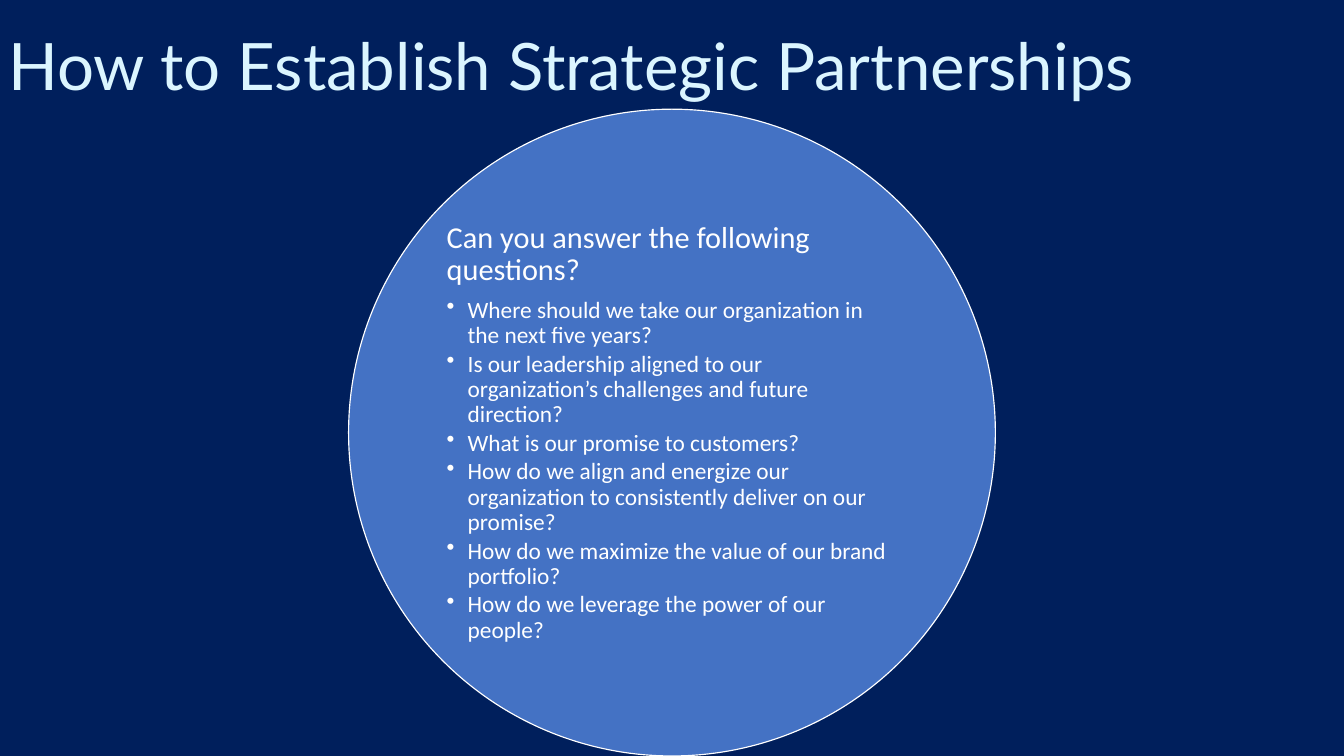
from dataclasses import dataclass
from math import sqrt

from lxml.etree import SubElement
from pptx import Presentation
from pptx.dml.color import RGBColor
from pptx.enum.shapes import MSO_SHAPE
from pptx.enum.text import MSO_ANCHOR
from pptx.oxml.ns import qn
from pptx.util import Inches, Pt

# Content
TITLE = "How to Establish Strategic Partnerships"
LEAD = "Can you answer the following questions?"
QUESTIONS = [
    "Where should we take our organization in the next five years?",
    "Is our leadership aligned to our organization’s challenges and future direction?",
    "What is our promise to customers?",
    "How do we align and energize our organization to consistently deliver on our promise?",
    "How do we maximize the value of our brand portfolio?",
    "How do we leverage the power of our people?",
]


@dataclass(frozen=True)
class Theme:
    background: RGBColor = RGBColor.from_string("001F5C")
    title: RGBColor = RGBColor.from_string("DBF5FF")
    circle: RGBColor = RGBColor.from_string("4472C4")
    light: RGBColor = RGBColor.from_string("FFFFFF")
    title_font: str = "Lato"
    body_font: str = "Calibri"
    title_size: int = 56
    lead_size: int = 26
    question_size: int = 20


THEME = Theme()

# Layout: the circle fills the height below the title, its text the inscribed square
WIDTH, HEIGHT = 16, 9
TITLE_WIDTH, TITLE_HEIGHT = 0.87 * WIDTH, 1.3
DIAMETER = HEIGHT - TITLE_HEIGHT
TEXT_SIDE = DIAMETER / sqrt(2)
TEXT_TOP = TITLE_HEIGHT + (DIAMETER - TEXT_SIDE) / 2
INSET = 0.04
BULLET_INDENT = 0.25


def add_text_box(slide, left, top, width, height, anchor):
    box = slide.shapes.add_textbox(*map(Inches, (left, top, width, height)))
    box.text_frame.word_wrap = True
    box.text_frame.vertical_anchor = anchor
    return box.text_frame


def write(paragraph, text, font_name, size, color, space_after=0):
    paragraph.text = text
    paragraph.line_spacing = 0.9
    paragraph.space_after = Pt(space_after)
    font = paragraph.runs[0].font
    font.name, font.size = font_name, Pt(size)
    font.color.rgb = color


def add_bullet(paragraph):
    properties = paragraph._p.get_or_add_pPr()
    properties.set("marL", str(Inches(BULLET_INDENT)))
    properties.set("indent", str(-Inches(BULLET_INDENT)))
    SubElement(properties, qn("a:buChar"), char="•")


def main():
    presentation = Presentation()
    presentation.slide_width, presentation.slide_height = Inches(WIDTH), Inches(HEIGHT)
    slide = presentation.slides.add_slide(presentation.slide_layouts[6])
    slide.background.fill.solid()
    slide.background.fill.fore_color.rgb = THEME.background

    # Title
    title = add_text_box(slide, 0, 0, TITLE_WIDTH, TITLE_HEIGHT, MSO_ANCHOR.BOTTOM)
    write(title.paragraphs[0], TITLE, THEME.title_font, THEME.title_size, THEME.title)

    # Circle
    circle = slide.shapes.add_shape(
        MSO_SHAPE.OVAL, Inches((WIDTH - DIAMETER) / 2), Inches(TITLE_HEIGHT),
        Inches(DIAMETER), Inches(DIAMETER))
    circle.shadow.inherit = False
    circle.fill.solid()
    circle.fill.fore_color.rgb = THEME.circle
    circle.line.color.rgb = THEME.light
    circle.line.width = Pt(1)

    # Questions
    body = add_text_box(slide, (WIDTH - TEXT_SIDE) / 2, TEXT_TOP,
                        TEXT_SIDE, TEXT_SIDE, MSO_ANCHOR.MIDDLE)
    body.margin_left = body.margin_right = Inches(INSET)
    body.margin_top = body.margin_bottom = Inches(INSET)
    write(body.paragraphs[0], LEAD, THEME.body_font, THEME.lead_size,
          THEME.light, space_after=0.35 * THEME.lead_size)
    for question in QUESTIONS:
        paragraph = body.add_paragraph()
        paragraph.level = 1
        add_bullet(paragraph)
        write(paragraph, question, THEME.body_font, THEME.question_size,
              THEME.light, space_after=0.15 * THEME.question_size)

    presentation.save("out.pptx")


if __name__ == "__main__":
    main()
